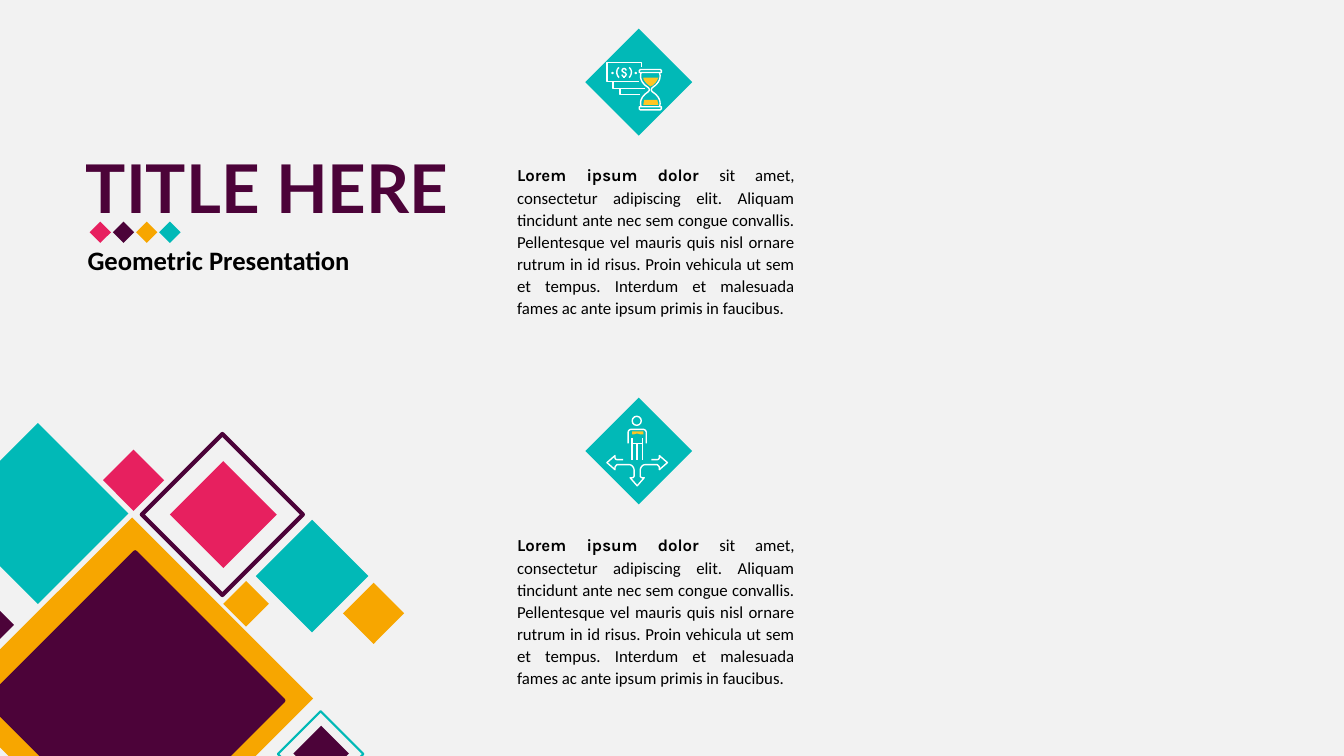
"""Build a geometric title slide with two icon-led text blocks."""
from dataclasses import dataclass

from lxml import etree
from pptx import Presentation
from pptx import util as u
from pptx.dml.color import RGBColor
from pptx.enum import shapes, text
from pptx.oxml.ns import qn
from pptx.shapes import autoshape, shapetree
from pptx.text.text import TextFrame

BACKDROP = RGBColor(0xF2, 0xF2, 0xF2)
PLUM = RGBColor(0x4C, 0x03, 0x39)
TEAL = RGBColor(0x01, 0xB9, 0xB7)
AMBER = RGBColor(0xF7, 0xA6, 0x00)
PINK = RGBColor(0xE7, 0x20, 0x5F)
GOLD = RGBColor(0xFF, 0xC5, 0x24)
WHITE = RGBColor(0xFF, 0xFF, 0xFF)
BLACK = RGBColor(0, 0, 0)

LEAD = "Lorem ipsum dolor "
BODY = (
    "sit amet, consectetur adipiscing elit. Aliquam tincidunt ante nec sem congue convallis. "
    "Pellentesque vel mauris quis nisl ornare rutrum in id risus. Proin vehicula ut sem et tempus. "
    "Interdum et malesuada fames ac ante ipsum primis in faucibus."
)
CURVE_STEPS = 8

Points = list[tuple[float, ...]]


@dataclass
class Diamond:
    left: float
    top: float
    size: float
    fill: RGBColor | None = None
    outline: RGBColor | None = None
    weight: float = 1


@dataclass
class Stroke:
    points: Points
    closed: bool = False
    fill: RGBColor | None = None


@dataclass
class Icon:
    strokes: list[Stroke]
    lines: Points
    circles: Points


def trace(steps: Points) -> Points:
    """Turn corners (x, y) and cubic curves (three x, y pairs) into points."""
    points = [steps[0]]
    for step in steps[1:]:
        if len(step) == 2:
            points.append(step)
            continue
        x0, y0 = points[-1]
        x1, y1, x2, y2, x3, y3 = step
        for i in range(1, CURVE_STEPS + 1):
            t = i / CURVE_STEPS
            s = 1 - t
            a, b, c, d = s**3, 3 * s * s * t, 3 * s * t * t, t**3
            points.append((a * x0 + b * x1 + c * x2 + d * x3, a * y0 + b * y1 + c * y2 + d * y3))
    return points


def flip(points: Points, axis: float) -> Points:
    """Mirror points across a vertical axis, in reverse order."""
    return [(2 * axis - x, y) for x, y in reversed(points)]


def paint(shape: autoshape.Shape, fill: RGBColor | None, outline: RGBColor | None, weight: float = 1) -> None:
    """Set fill and outline, and drop the shadow."""
    shape.shadow.inherit = False
    if fill is None:
        shape.fill.background()
    else:
        shape.fill.solid()
        shape.fill.fore_color.rgb = fill
    if outline is None:
        shape.line.fill.background()
    else:
        shape.line.color.rgb = outline
        shape.line.width = u.Pt(weight)


def add_diamonds(canvas: shapetree.SlideShapes, diamonds: list[Diamond]) -> None:
    """Draw squares turned by 45 degrees in one group."""
    members = canvas.add_group_shape().shapes
    for d in diamonds:
        square = members.add_shape(
            shapes.MSO_SHAPE.RECTANGLE, u.Inches(d.left), u.Inches(d.top), u.Inches(d.size), u.Inches(d.size)
        )
        square.rotation = 45
        paint(square, d.fill, d.outline, d.weight)


def add_icon(canvas: shapetree.SlideShapes, icon: Icon) -> None:
    """Draw the strokes, lines and circles of an icon in one group."""
    members = canvas.add_group_shape().shapes
    for stroke in icon.strokes:
        start, *rest = [(u.Inches(x), u.Inches(y)) for x, y in stroke.points]
        builder = members.build_freeform(*start)
        builder.add_line_segments(rest, close=stroke.closed)
        paint(builder.convert_to_shape(), stroke.fill, None if stroke.fill else WHITE)
    for ends in icon.lines:
        line = members.add_connector(shapes.MSO_CONNECTOR.STRAIGHT, *map(u.Inches, ends))
        line.line.color.rgb = WHITE
        line.line.width = u.Pt(1)
        etree.SubElement(line._element.spPr, qn("a:effectLst"))
    for left, top, size in icon.circles:
        circle = members.add_shape(
            shapes.MSO_SHAPE.OVAL, u.Inches(left), u.Inches(top), u.Inches(size), u.Inches(size)
        )
        paint(circle, None, WHITE)


def set_heading(frame: TextFrame, words: str, size: float, face: str, colour: RGBColor) -> None:
    """Write one bold, left-aligned, unwrapped line."""
    frame.text = words
    frame.word_wrap = False
    frame.auto_size = text.MSO_AUTO_SIZE.SHAPE_TO_FIT_TEXT
    frame.vertical_anchor = text.MSO_ANCHOR.TOP
    line = frame.paragraphs[0]
    line.alignment = text.PP_ALIGN.LEFT
    line.font.size, line.font.name, line.font.bold = u.Pt(size), face, True
    line.font.color.rgb = colour


def add_body(canvas: shapetree.SlideShapes, top: float) -> None:
    """Add a justified text block with a bold lead."""
    frame = canvas.add_textbox(u.Inches(5.03), u.Inches(top), u.Inches(2.95), u.Inches(1.64)).text_frame
    frame.word_wrap = True
    frame.auto_size = text.MSO_AUTO_SIZE.SHAPE_TO_FIT_TEXT
    block = frame.paragraphs[0]
    block.alignment = text.PP_ALIGN.JUSTIFY
    block.line_spacing = 1.1
    block.font.size = u.Pt(12)
    block.font.color.rgb = BLACK
    for words, face, bold in ((LEAD, "Karla", True), (BODY, "Calibri", False)):
        run = block.add_run()
        run.text = words
        run.font.name, run.font.bold = face, bold


def money_time_icon() -> Icon:
    """Describe banknotes beside an hourglass."""
    paren = trace([(6.14, 0.77), (6.11, 0.74, 6.11, 0.69, 6.14, 0.67)])
    dollar = trace([
        (6.17, 0.74), (6.17, 0.75, 6.18, 0.76, 6.19, 0.76), (6.2, 0.76, 6.21, 0.75, 6.21, 0.74),
        (6.21, 0.73, 6.2, 0.72, 6.19, 0.72), (6.18, 0.71, 6.17, 0.71, 6.17, 0.7),
        (6.17, 0.69, 6.18, 0.68, 6.19, 0.68), (6.2, 0.68, 6.21, 0.69, 6.21, 0.7),
    ])
    glass = trace([
        (6.36, 1.06), (6.36, 1.06, 6.32, 0.98, 6.43, 0.91), (6.43, 0.91, 6.44, 0.9, 6.44, 0.89),
        (6.44, 0.88, 6.43, 0.87, 6.43, 0.87), (6.32, 0.8, 6.36, 0.72, 6.36, 0.72),
    ])
    cap = [(6.56, 0.72), (6.34, 0.72), (6.34, 0.7), (6.35, 0.69), (6.55, 0.69), (6.56, 0.7)]
    base = [(x, 1.78 - y) for x, y in cap]
    upper_sand = trace([
        (6.44, 0.85), (6.44, 0.85, 6.45, 0.85, 6.45, 0.86), (6.46, 0.85, 6.46, 0.85, 6.47, 0.85),
        (6.51, 0.82, 6.52, 0.79, 6.53, 0.77), (6.38, 0.77), (6.38, 0.79, 6.4, 0.82, 6.44, 0.85),
    ])
    lower_sand = [(6.52, 0.99), (6.39, 0.99), (6.38, 1.04), (6.53, 1.04)]
    notes = [
        [(6.35, 0.94), (6.15, 0.94), (6.15, 0.88)],
        [(6.4, 0.88), (6.08, 0.88), (6.08, 0.81)],
        [(6.36, 0.66), (6.36, 0.62), (6.02, 0.62), (6.02, 0.81), (6.34, 0.81)],
    ]
    outlines = [*notes, paren, flip(paren, 6.19), dollar, glass, flip(glass, 6.45)]
    strokes = [Stroke(points) for points in outlines]
    strokes += [Stroke(points, True) for points in (cap, base)]
    strokes += [Stroke(points, True, GOLD) for points in (upper_sand, lower_sand)]
    return Icon(
        strokes, [(6.19, 0.67, 6.19, 0.68), (6.19, 0.76, 6.19, 0.77)], [(6.3, 0.72, 0.01), (6.07, 0.72, 0.01)]
    )


def direction_icon() -> Icon:
    """Describe a person above a three-way arrow."""
    axis = 6.32
    shoulder = trace([(6.23, 4.4), (6.23, 4.29), (6.23, 4.27, 6.25, 4.26, 6.26, 4.26)])
    arrow = trace([
        (6.46, 4.56), (6.52, 4.56), (6.53, 4.56, 6.54, 4.55, 6.54, 4.54), (6.54, 4.52), (6.62, 4.59),
        (6.54, 4.66), (6.54, 4.64), (6.54, 4.63, 6.53, 4.62, 6.52, 4.61), (6.4, 4.61),
        (6.37, 4.61, 6.35, 4.64, 6.35, 4.67), (6.35, 4.72), (6.35, 4.73, 6.36, 4.74, 6.37, 4.74),
        (6.39, 4.74), (6.32, 4.82),
    ])
    badge = trace([(6.27, 4.28), (6.27, 4.31), (6.29, 4.31), (6.31, 4.3, 6.33, 4.3, 6.35, 4.31), (6.38, 4.31), (6.38, 4.28)])
    strokes = [Stroke(half + flip(half, axis)) for half in (shoulder, arrow)]
    legs = [(6.27, 4.35, 6.27, 4.56), (6.32, 4.4, 6.32, 4.56), (6.37, 4.35, 6.37, 4.56), (6.27, 4.4, 6.37, 4.4)]
    return Icon([*strokes, Stroke(badge, True, GOLD)], legs, [(6.27, 4.13, 0.09)])


def main() -> None:
    """Compose and save the slide."""
    deck = Presentation()
    deck.slide_width, deck.slide_height = u.Inches(13.33), u.Inches(7.5)
    slide = deck.slides.add_slide(deck.slide_layouts[5])
    slide.background.fill.solid()
    slide.background.fill.fore_color.rgb = BACKDROP
    canvas = slide.shapes
    add_diamonds(canvas, [
        Diamond(0.04, 5.66, 2.54, AMBER), Diamond(-1.02, 5.72, 0.96, PLUM), Diamond(-0.26, 4.46, 1.27, TEAL),
        Diamond(1.64, 4.54, 1.13, None, PLUM, 3), Diamond(2.28, 5.83, 0.32, AMBER),
        Diamond(3.49, 5.87, 0.43, AMBER), Diamond(1.11, 4.55, 0.43, PINK), Diamond(2.7, 5.32, 0.79, TEAL),
        Diamond(2.88, 7.18, 0.6, None, TEAL, 1.5), Diamond(2.99, 7.28, 0.39, PLUM),
        Diamond(0.3, 5.91, 2.08, PLUM, PLUM, 3), Diamond(1.84, 4.73, 0.75, PINK),
    ])
    for body_top, diamond_top, icon in ((1.57, 0.44, money_time_icon()), (5.24, 4.1, direction_icon())):
        add_body(canvas, body_top)
        add_diamonds(canvas, [Diamond(5.96, diamond_top, 0.75, TEAL)])
        add_icon(canvas, icon)
    title = canvas.title
    title.left, title.top, title.width, title.height = map(u.Inches, (0.75, 1.4, 3.93, 0.91))
    set_heading(title.text_frame, "TITLE HERE", 48, "Lato", PLUM)
    subtitle = canvas.add_textbox(u.Inches(0.77), u.Inches(2.37), u.Inches(2.84), u.Inches(0.42))
    set_heading(subtitle.text_frame, "Geometric Presentation", 19, "Calibri", BLACK)
    accents = enumerate((PINK, PLUM, AMBER, TEAL))
    add_diamonds(canvas, [Diamond(0.92 + 0.23 * i, 2.23, 0.15, colour) for i, colour in accents])
    deck.save("out.pptx")


if __name__ == "__main__":
    main()
